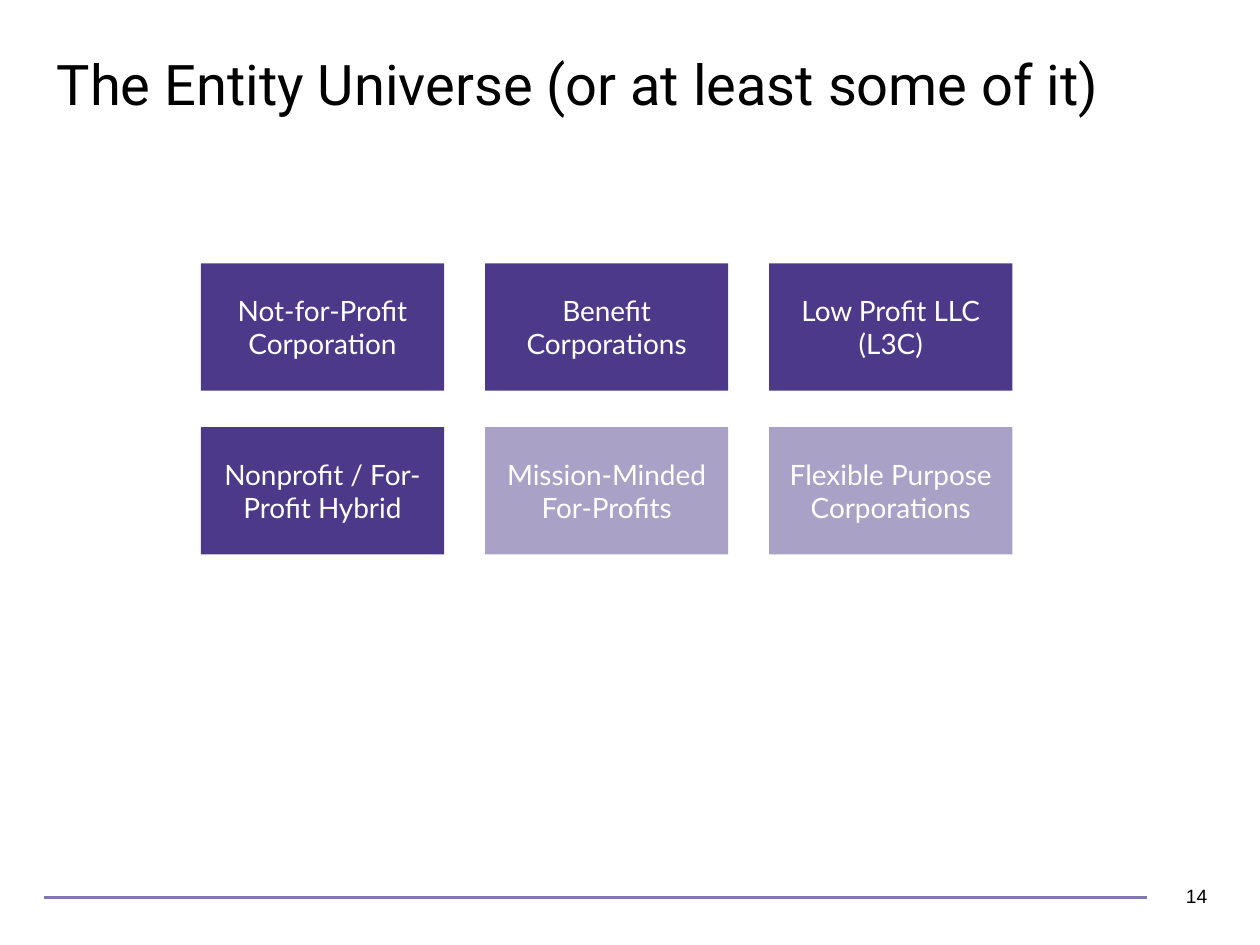
from dataclasses import dataclass
from lxml.etree import SubElement
from pptx import Presentation
from pptx.dml.color import RGBColor
from pptx.enum.shapes import MSO_CONNECTOR, MSO_SHAPE
from pptx.enum.text import MSO_ANCHOR, PP_ALIGN
from pptx.oxml.ns import qn
from pptx.util import Inches, Pt

# Content: rows of (label, is faded)
TITLE = "The Entity Universe (or at least some of it)"
PAGE = "14"
ROWS = [
    [("Not-for-Profit Corporation", False),
     ("Benefit Corporations", False),
     ("Low Profit LLC (L3C)", False)],
    [("Nonprofit / For-Profit Hybrid", False),
     ("Mission-Minded For-Profits", True),
     ("Flexible Purpose Corporations", True)],
]


@dataclass(frozen=True)
class Theme:
    fill: str = "4C3989"
    rule: str = "8275B4"
    ink: str = "000000"
    light: str = "FFFFFF"
    fade: int = 47
    head: tuple = ("Roboto", 32)
    label: tuple = ("Lato", 16)
    foot: tuple = ("Arial", 11)


@dataclass(frozen=True)
class Grid:
    left: float = 1.595
    top: float = 2.09
    wide: float = 1.93
    high: float = 1.01
    step_x: float = 2.255
    step_y: float = 1.3

    def cell(self, row, col):
        return (self.left + col * self.step_x, self.top + row * self.step_y,
                self.wide, self.high)


THEME, GRID = Theme(), Grid()


def inches(*sizes):
    return [Inches(size) for size in sizes]


def write(shape, text, style, color, align, anchor):
    frame = shape.text_frame
    frame.word_wrap = True
    frame.vertical_anchor = anchor
    para = frame.paragraphs[0]
    para.alignment = align
    run = para.add_run()
    run.text = text
    run.font.name, run.font.size = style[0], Pt(style[1])
    run.font.color.rgb = RGBColor.from_string(color)
    return para


def add_box(slide, place, text, faded):
    box = slide.shapes.add_shape(MSO_SHAPE.RECTANGLE, *inches(*place))
    box.shadow.inherit = False
    box.line.fill.background()
    box.fill.solid()
    box.fill.fore_color.rgb = RGBColor.from_string(THEME.fill)
    if faded:
        tint = box.fill._xPr.find(f"{qn('a:solidFill')}/{qn('a:srgbClr')}")
        SubElement(tint, qn("a:alpha"), val=str(THEME.fade * 1000))
    write(box, text, THEME.label, THEME.light, PP_ALIGN.CENTER, MSO_ANCHOR.MIDDLE)


def main():
    deck = Presentation()
    deck.slide_width, deck.slide_height = inches(10, 7.5)
    slide = deck.slides.add_slide(deck.slide_layouts[5])

    # Footer rule
    rule = slide.shapes.add_connector(
        MSO_CONNECTOR.STRAIGHT, *inches(0.35, 7.12, 9.1, 7.12))
    rule.line.color.rgb = RGBColor.from_string(THEME.rule)
    rule.line.width = Pt(1.75)
    SubElement(rule._element.spPr, qn("a:effectLst"))

    # Title
    title = slide.shapes.title
    title.left, title.top, title.width, title.height = inches(0.35, 0.4, 9.34, 0.81)
    para = write(title, TITLE, THEME.head, THEME.ink, PP_ALIGN.LEFT, MSO_ANCHOR.TOP)
    para.line_spacing = 0.9

    # Page number
    foot = slide.shapes.add_textbox(*inches(8.86, 6.91, 0.82, 0.4))
    write(foot, PAGE, THEME.foot, THEME.ink, PP_ALIGN.RIGHT, MSO_ANCHOR.MIDDLE)

    # Entity boxes
    for row, items in enumerate(ROWS):
        for col, (text, faded) in enumerate(items):
            add_box(slide, GRID.cell(row, col), text, faded)

    deck.save("out.pptx")


if __name__ == "__main__":
    main()
